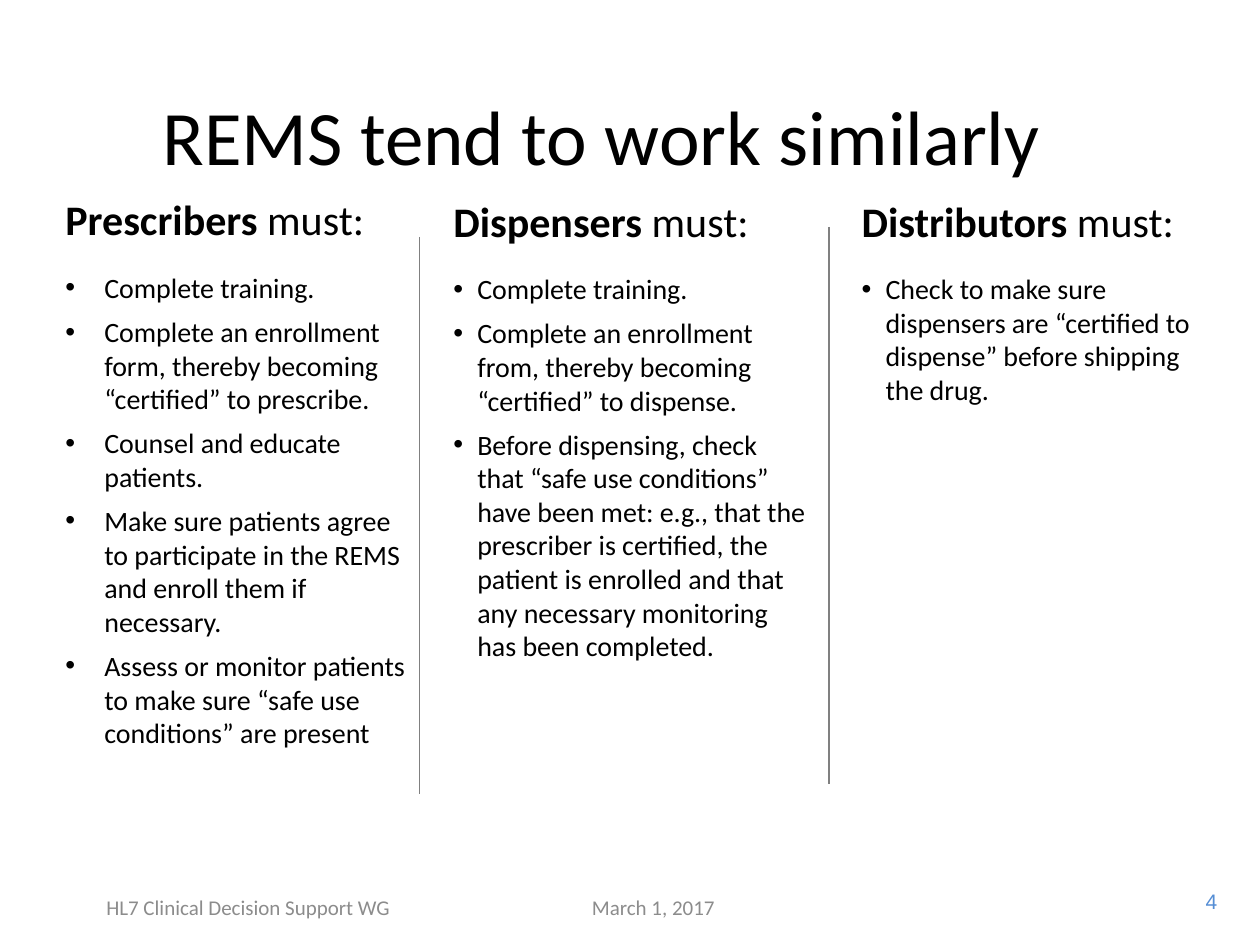
from lxml import etree
from pptx import Presentation
from pptx.dml.color import RGBColor
from pptx.enum.shapes import MSO_CONNECTOR
from pptx.enum.text import MSO_ANCHOR, PP_ALIGN
from pptx.oxml.ns import qn
from pptx.util import Inches, Pt

STRAIGHT = MSO_CONNECTOR.STRAIGHT
TOP, MIDDLE = MSO_ANCHOR.TOP, MSO_ANCHOR.MIDDLE
LEFT, CENTER, RIGHT = PP_ALIGN.LEFT, PP_ALIGN.CENTER, PP_ALIGN.RIGHT

COLORS = {"text": "000000", "footer": "8C8C8C", "number": "558ED5", "divider": "808080"}

TITLE = {"name": "Calibri", "size": Pt(44), "color": "text"}
HEADING = {"name": "Calibri", "size": Pt(24), "color": "text"}
BODY = {"name": "Calibri", "size": Pt(16), "color": "text"}
FOOTER = {"name": "Calibri", "size": Pt(12), "color": "footer"}
NUMBER = {"name": "Arial", "size": Pt(12), "color": "number"}

LABELS = [
    ("REMS tend to work similarly", (0.5, 0.55, 8.55, 1.04), TITLE, CENTER, MIDDLE),
    ("HL7 Clinical Decision Support WG", (0.27, 7, 3.4, 0.4), FOOTER, CENTER, MIDDLE),
    ("March 1, 2017", (4.02, 7, 2.33, 0.4), FOOTER, CENTER, MIDDLE),
    ("4", (9.35, 7, 0.41, 0.3), NUMBER, RIGHT, TOP),
]

COLUMNS = [
    ("Prescribers", (0.42, 1.49, 2.92, 4.88), 0.31, [
        "Complete training.",
        "Complete an enrollment form, thereby becoming “certified” to prescribe.",
        "Counsel and educate patients.",
        "Make sure patients agree to participate in the REMS and enroll them if necessary.",
        "Assess or monitor patients to make sure “safe use conditions” are present",
    ]),
    ("Dispensers", (3.5, 1.5, 3, 4.95), 0.19, [
        "Complete training.",
        "Complete an enrollment from, thereby becoming “certified” to dispense.",
        "Before dispensing, check that “safe use conditions” have been met: e.g., that the "
        "prescriber is certified, the patient is enrolled and that any necessary monitoring "
        "has been completed.",
    ]),
    ("Distributors", (6.74, 1.5, 3, 4.95), 0.19, [
        "Check to make sure dispensers are “certified to dispense” before shipping the drug.",
    ]),
]

DIVIDERS = [(3.33, 1.88), (6.58, 1.8)]
DIVIDER_HEIGHT = 4.42


def add_run(paragraph, text, style, bold=False):
    """Add a run of text with the given font values."""
    run = paragraph.add_run()
    run.text = text
    for name, value in {**style, "bold": bold}.items():
        if name == "color":
            run.font.color.rgb = RGBColor.from_string(COLORS[value])
        else:
            setattr(run.font, name, value)


def add_text_frame(slide, box, anchor=TOP):
    """Add a wrapping text box and return its text frame."""
    frame = slide.shapes.add_textbox(*map(Inches, box)).text_frame
    frame.word_wrap = True
    frame.vertical_anchor = anchor
    return frame


def add_label(slide, text, box, style, alignment, anchor):
    """Add a text box that holds one line."""
    paragraph = add_text_frame(slide, box, anchor).paragraphs[0]
    paragraph.alignment = alignment
    add_run(paragraph, text, style)


def add_bullet(frame, text, indent):
    """Add a bulleted paragraph with a hanging indent."""
    paragraph = frame.add_paragraph()
    paragraph.alignment = LEFT
    paragraph.space_after = Pt(6)
    properties = paragraph._p.get_or_add_pPr()
    properties.set("marL", str(Inches(indent)))
    properties.set("indent", str(-Inches(indent)))
    etree.SubElement(properties, qn("a:buFont"), typeface="Arial")
    etree.SubElement(properties, qn("a:buChar"), char="•")
    add_run(paragraph, text, BODY)


def add_column(slide, role, box, indent, duties):
    """Add a heading for a role with its duties below."""
    frame = add_text_frame(slide, box)
    heading = frame.paragraphs[0]
    heading.space_after = Pt(15)
    add_run(heading, role, HEADING, bold=True)
    add_run(heading, " must:", HEADING)
    for duty in duties:
        add_bullet(frame, duty, indent)


def add_divider(slide, left, top):
    """Add a thin vertical line between two columns."""
    ends = (left, top, left, top + DIVIDER_HEIGHT)
    connector = slide.shapes.add_connector(STRAIGHT, *map(Inches, ends))
    connector.line.color.rgb = RGBColor.from_string(COLORS["divider"])
    connector.line.width = Pt(0.75)
    etree.SubElement(connector._element.spPr, qn("a:effectLst"))


def main():
    """Build the slide and save it."""
    presentation = Presentation()
    presentation.slide_width = Inches(10)
    presentation.slide_height = Inches(7.5)
    slide = presentation.slides.add_slide(presentation.slide_layouts[6])
    for label in LABELS:
        add_label(slide, *label)
    for column in COLUMNS:
        add_column(slide, *column)
    for divider in DIVIDERS:
        add_divider(slide, *divider)
    presentation.save("out.pptx")


if __name__ == "__main__":
    main()
